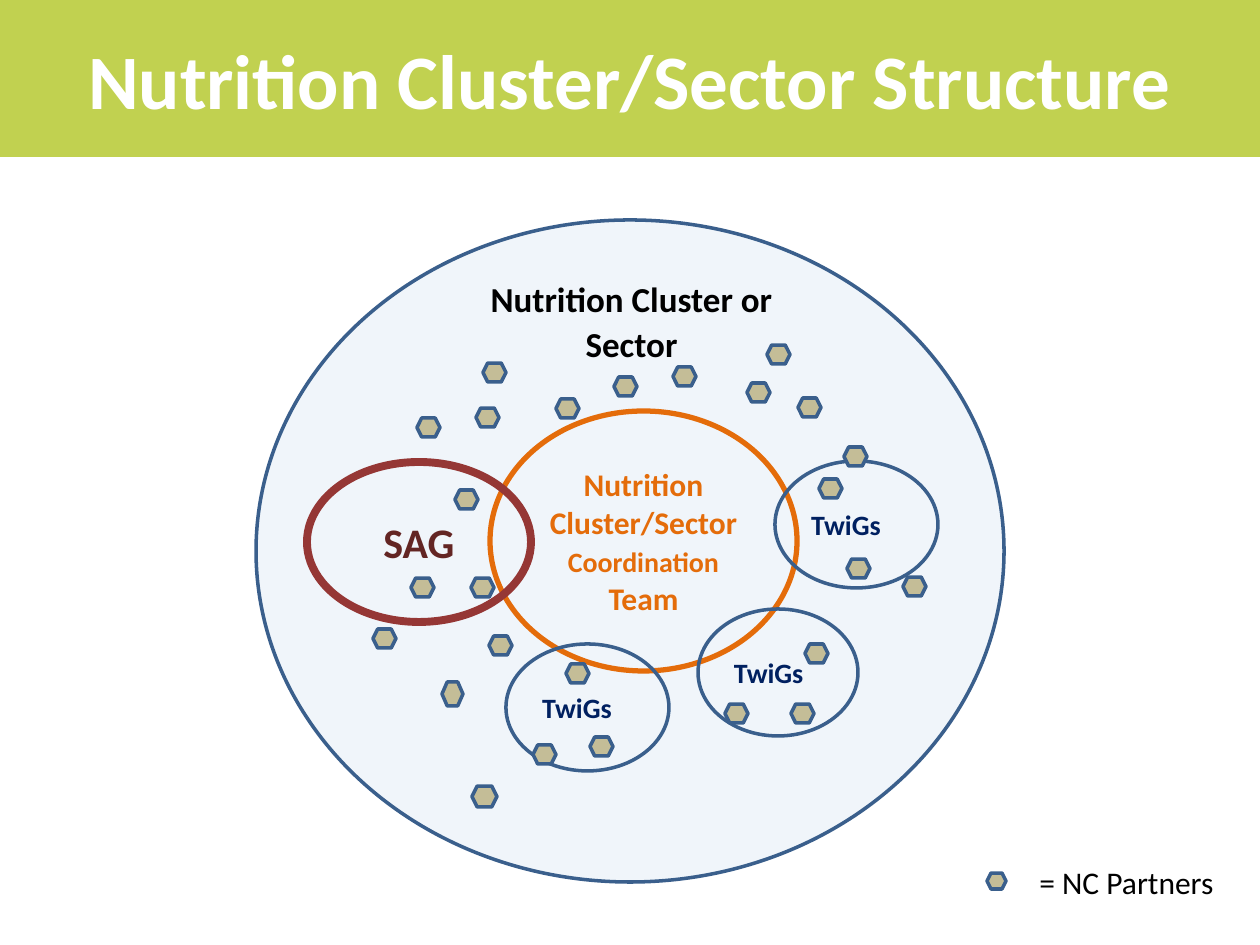
from pptx import Presentation
from pptx import util as u
from pptx.dml.color import RGBColor
from pptx.enum import shapes, text

PX = 914400 / 126  # EMU in one px
BLUE, ORANGE, MAROON = "3A5F8C", "E46C0A", "953735"
OVAL = shapes.MSO_SHAPE.OVAL
CENTER = text.PP_ALIGN.CENTER

# Partner positions, relative to the cluster
PARTNERS = [
    # around the coordination team
    (227, 143), (161, 198), (220, 188), (300, 179), (358, 157), (417, 147),
    (491, 163), (511, 125), (542, 178), (647, 357), (233, 416), (117, 409),
    # in the SAG
    (199, 270), (155, 358), (215, 358),
    # in the three TwiGs
    (588, 227), (563, 259), (591, 339),
    (549, 424), (535, 484), (469, 484),
    (310, 444), (334, 517), (277, 525),
]
ODD_PARTNERS = [(186, 462, 21, 24), (216, 566, 25, 21)]
TWIGS = [(250, 424, 163, 127), (519, 241, 163, 127), (442, 389, 160, 127)]


def px(*lengths):
    return [u.Emu(round(length * PX)) for length in lengths]


def rgb(color):
    return RGBColor.from_string(color)


def inside(box, part):
    return (box[0] + part[0], box[1] + part[1], *part[2:])


def add_run(paragraph, words, size, color, bold=True):
    run = paragraph.add_run()
    run.text = words
    run.font.name = "Calibri"
    run.font.size = u.Pt(size)
    run.font.bold = bold
    run.font.color.rgb = rgb(color)


def add_outline(parent, kind, box, line, width=2, fill=None):
    outline = parent.add_shape(kind, *px(*box))
    outline.shadow.inherit = False
    if fill:
        outline.fill.solid()
        outline.fill.fore_color.rgb = rgb(fill)
    else:
        outline.fill.background()
    outline.line.color.rgb = rgb(line)
    outline.line.width = u.Pt(width)
    return outline


def add_team(parent, box, runs, line, width=2, align=CENTER):
    """Ellipse with its name, given as (words, size, color) runs."""
    team = add_outline(parent, OVAL, box, line, width)
    frame = team.text_frame
    frame.word_wrap = True
    frame.vertical_anchor = text.MSO_ANCHOR.MIDDLE
    name = frame.paragraphs[0]
    name.alignment = align
    for run in runs:
        add_run(name, *run)


def add_partner(parent, box):
    add_outline(parent, shapes.MSO_SHAPE.HEXAGON, box, BLUE, fill="C4BD97")


def add_title(slide, box):
    title = slide.shapes.title
    title.left, title.top, title.width, title.height = px(*box)
    title.fill.solid()
    title.fill.fore_color.rgb = rgb("C1D150")
    title.text_frame.vertical_anchor = text.MSO_ANCHOR.MIDDLE
    heading = title.text_frame.paragraphs[0]
    heading.alignment = CENTER
    add_run(heading, "Nutrition Cluster/Sector Structure", 44, "FFFFFF")


def add_cluster(slide, box):
    cluster = slide.shapes.add_group_shape().shapes
    add_outline(cluster, OVAL, box, BLUE, fill="F0F5FA")

    # Coordination team and SAG
    add_team(cluster, inside(box, (234, 191, 307, 260)),
             [("Nutrition Cluster/Sector ", 18, ORANGE),
              ("Coordination", 16, ORANGE),
              (" Team", 18, ORANGE)], ORANGE, 3)
    add_team(cluster, inside(box, (51, 242, 224, 160)),
             [("SAG", 24, "632523")], MAROON, 4.5)

    # Name of the whole cluster
    label = cluster.add_textbox(*px(*inside(box, (214, 48, 323, 112))))
    label.text_frame.word_wrap = True
    name = label.text_frame.paragraphs[0]
    name.alignment = CENTER
    name.line_spacing = 1.07
    name.space_after = u.Pt(8)
    add_run(name, "Nutrition Cluster or Sector", 20, "000000")

    # Working groups and partners
    for twig in TWIGS:
        add_team(cluster, inside(box, twig), [("TwiGs", 16, "002060")],
                 BLUE, align=text.PP_ALIGN.LEFT)
    for partner in [(x, y, 23, 19) for x, y in PARTNERS] + ODD_PARTNERS:
        add_partner(cluster, inside(box, partner))


def add_legend(slide, box):
    add_partner(slide.shapes, inside(box, (0, 16, 19, 16)))
    label = slide.shapes.add_textbox(*px(*inside(box, (40, 0, 202, 50))))
    label.text_frame.word_wrap = False
    add_run(label.text_frame.paragraphs[0], "= NC Partners", 18, "000000", False)


def main():
    deck = Presentation()
    deck.slide_width, deck.slide_height = px(1260, 945)
    slide = deck.slides.add_slide(deck.slide_layouts[5])
    add_title(slide, (0, 0, 1260, 157))
    add_cluster(slide, (256, 220, 748, 662))
    add_legend(slide, (987, 857, 242, 50))
    deck.save("out.pptx")


if __name__ == "__main__":
    main()
